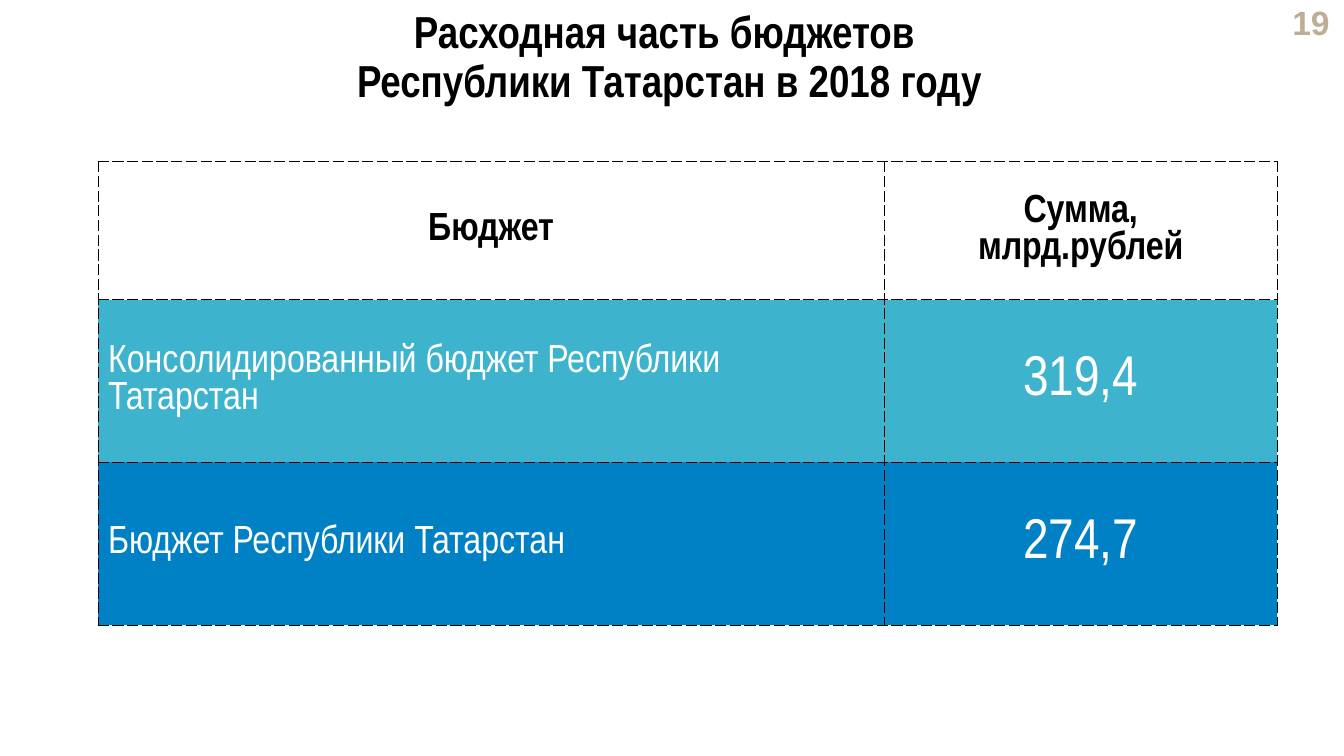
from dataclasses import dataclass

from lxml.etree import SubElement
from pptx import Presentation
from pptx.dml.color import RGBColor as Color
from pptx.enum.text import MSO_ANCHOR as Anchor, PP_ALIGN as Align
from pptx.oxml.ns import qn
from pptx.util import Cm, Pt

# Content: a \v is a line break inside a paragraph
TITLE = "Расходная часть бюджетов \vРеспублики Татарстан в 2018 году"
PAGE_NUMBER = "19"
HEADER = ("Бюджет", "Сумма,\vмлрд.рублей")
BUDGETS = [
    ("Консолидированный бюджет Республики Татарстан", "319,4"),
    ("Бюджет Республики Татарстан", "274,7"),
]


@dataclass(frozen=True)
class Theme:
    font: str = "Arial Narrow"
    number_font: str = "Arial"
    black: str = "000000"
    white: str = "FFFFFF"
    beige: str = "BFAE96"
    row_fills: tuple = ("3DB3CD", "0081C5")
    title_size: int = 32
    number_size: int = 24
    label_size: int = 28
    amount_size: int = 40
    border_width: float = 0.5


THEME = Theme()

# Layout in centimetres
TABLE_LEFT, TABLE_TOP = 2.47, 4.07
COLUMN_WIDTHS = (19.81, 9.91)
ROW_HEIGHTS = (3.48, 4.1, 4.1)


def write(text_frame, text, align, size, color, bold=False,
          font=THEME.font, spacing=1.0):
    text_frame.text = text
    text_frame.word_wrap = True
    paragraph = text_frame.paragraphs[0]
    paragraph.alignment = align
    paragraph.line_spacing = spacing
    for run in paragraph.runs:
        run.font.name = font
        run.font.size = Pt(size)
        run.font.bold = bold
        run.font.color.rgb = Color.from_string(color)


def add_text(slide, left, top, width, height, anchor, *args, **kwargs):
    box = slide.shapes.add_textbox(Cm(left), Cm(top), Cm(width), Cm(height))
    write(box.text_frame, *args, **kwargs)
    box.text_frame.vertical_anchor = anchor


def add_dashed_borders(cell):
    properties = cell._tc.get_or_add_tcPr()
    for side in ("lnL", "lnR", "lnT", "lnB"):
        line = SubElement(properties, qn(f"a:{side}"),
                          w=str(Pt(THEME.border_width)))
        fill = SubElement(line, qn("a:solidFill"))
        SubElement(fill, qn("a:srgbClr"), val=THEME.black)
        SubElement(line, qn("a:prstDash"), val="sysDash")


def add_budget_table(slide):
    rows = [HEADER, *BUDGETS]
    fills = (THEME.white, *THEME.row_fills)
    table = slide.shapes.add_table(
        len(rows), len(HEADER), Cm(TABLE_LEFT), Cm(TABLE_TOP),
        Cm(sum(COLUMN_WIDTHS)), Cm(sum(ROW_HEIGHTS))).table
    table.horz_banding = False
    for column, width in zip(table.columns, COLUMN_WIDTHS):
        column.width = Cm(width)
    for row, height in zip(table.rows, ROW_HEIGHTS):
        row.height = Cm(height)

    for r, texts in enumerate(rows):
        is_header = r == 0
        for c, text in enumerate(texts):
            is_amount = c == 1 and not is_header
            cell = table.cell(r, c)
            write(cell.text_frame, text,
                  Align.CENTER if is_header or is_amount else Align.LEFT,
                  THEME.amount_size if is_amount else THEME.label_size,
                  THEME.black if is_header else THEME.white,
                  bold=is_header)
            cell.vertical_anchor = Anchor.MIDDLE
            add_dashed_borders(cell)
            cell.fill.solid()
            cell.fill.fore_color.rgb = Color.from_string(fills[r])


def main():
    presentation = Presentation()
    presentation.slide_width, presentation.slide_height = Cm(33.87), Cm(19.05)
    slide = presentation.slides.add_slide(presentation.slide_layouts[6])

    # Page number and title
    add_text(slide, 31.6, 0.13, 2.16, 0.86, Anchor.MIDDLE, PAGE_NUMBER,
             Align.RIGHT, THEME.number_size, THEME.beige, bold=True,
             font=THEME.number_font)
    add_text(slide, 1.9, 0.13, 29.95, 1.6, Anchor.TOP, TITLE,
             Align.CENTER, THEME.title_size, THEME.black, bold=True,
             spacing=0.9)

    # Budget amounts
    add_budget_table(slide)
    presentation.save("out.pptx")


if __name__ == "__main__":
    main()
